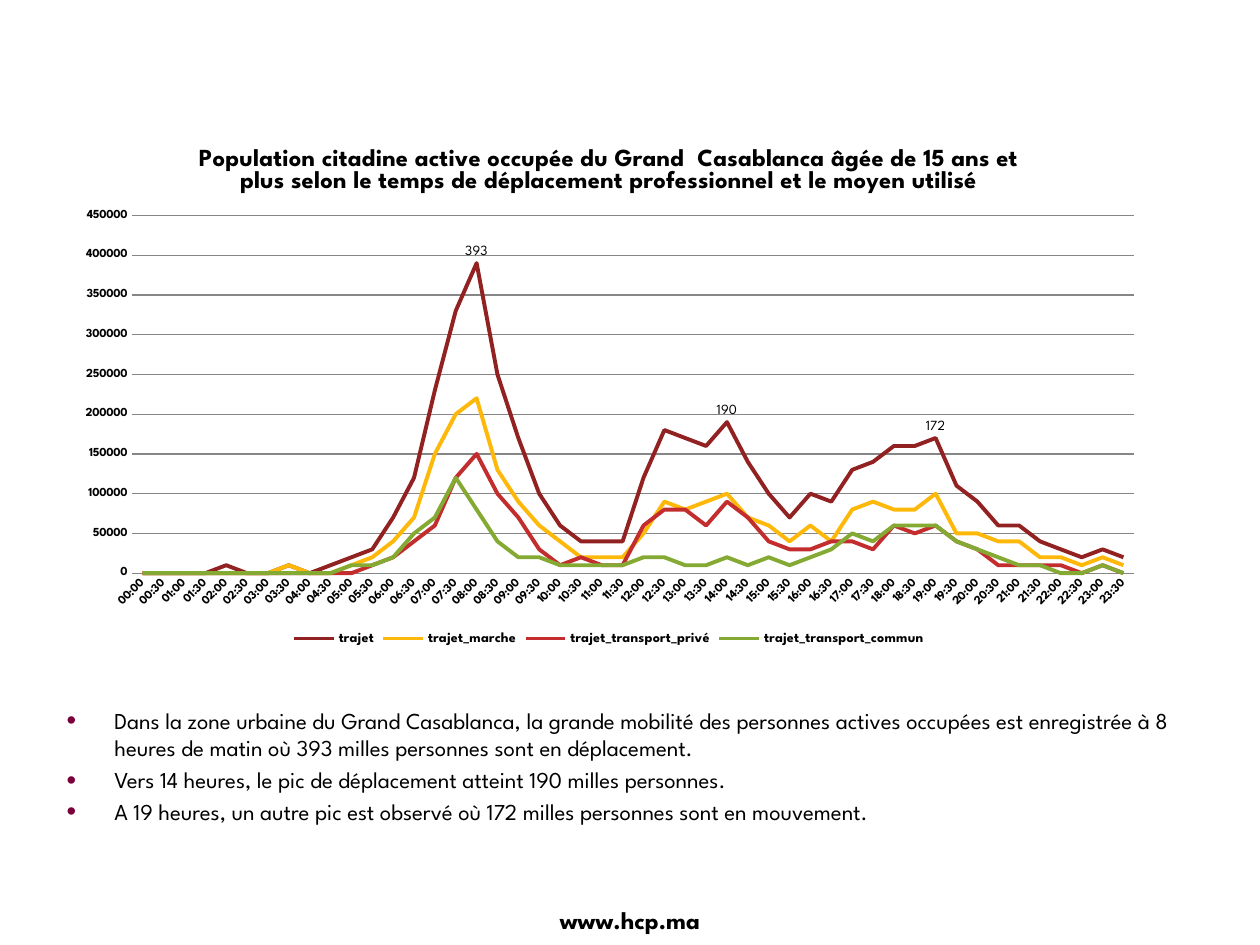
from pptx import Presentation
from pptx.chart.data import CategoryChartData
from pptx.dml.color import RGBColor
from pptx.enum.chart import XL_CHART_TYPE, XL_LABEL_POSITION, XL_LEGEND_POSITION, XL_TICK_MARK
from pptx.enum.text import PP_ALIGN
from pptx.oxml import parse_xml
from pptx.oxml.ns import nsdecls
from pptx.util import Inches, Pt

FONT = "League Spartan"


def style(font, size, color="000000", bold=False):
    font.name, font.size, font.bold = FONT, Pt(size), bold
    font.color.rgb = RGBColor.from_string(color)


def add_text(p, text, size=13, bold=False, align=None, before=0, bullet=None):
    p.alignment = align
    p.space_before = Pt(before)
    if bullet:
        pPr = p._p.get_or_add_pPr()
        pPr.set("marL", str(Inches(0.38)))
        pPr.set("indent", str(-Inches(0.38)))
        for xml in (f'<a:buClr {nsdecls("a")}><a:srgbClr val="{bullet}"/></a:buClr>',
                    f'<a:buSzPct {nsdecls("a")} val="120000"/>',
                    f'<a:buFont {nsdecls("a")} typeface="Arial"/>',
                    f'<a:buChar {nsdecls("a")} char="•"/>'):
            pPr.append(parse_xml(xml))
    r = p.add_run()
    r.text = text
    style(r.font, size, bold=bold)


title = ("Population citadine active occupée du Grand  Casablanca âgée de 15 ans et "
         "plus selon le temps de déplacement professionnel et le moyen utilisé")
bullets = [
    "Dans la zone urbaine du Grand Casablanca, la grande mobilité des personnes actives "
    "occupées est enregistrée à 8 heures de matin où 393 milles personnes sont en déplacement.",
    "Vers 14 heures, le pic de déplacement atteint 190 milles personnes.",
    "A 19 heures, un autre pic est observé où 172 milles personnes sont en mouvement.",
]
ten_thousands = {
    "trajet": ("922122", [
        0, 0, 0, 0, 1, 0, 0, 1, 0, 1, 2, 3, 7, 12, 23, 33,
        39, 25, 17, 10, 6, 4, 4, 4, 12, 18, 17, 16, 19, 14, 10, 7,
        10, 9, 13, 14, 16, 16, 17, 11, 9, 6, 6, 4, 3, 2, 3, 2]),
    "trajet_marche": ("FEB80A", [
        0, 0, 0, 0, 0, 0, 0, 1, 0, 0, 1, 2, 4, 7, 15, 20,
        22, 13, 9, 6, 4, 2, 2, 2, 5, 9, 8, 9, 10, 7, 6, 4,
        6, 4, 8, 9, 8, 8, 10, 5, 5, 4, 4, 2, 2, 1, 2, 1]),
    "trajet_transport_privé": ("C32D2E", [
        0, 0, 0, 0, 0, 0, 0, 0, 0, 0, 0, 1, 2, 4, 6, 12,
        15, 10, 7, 3, 1, 2, 1, 1, 6, 8, 8, 6, 9, 7, 4, 3,
        3, 4, 4, 3, 6, 5, 6, 4, 3, 1, 1, 1, 1, 0, 1, 0]),
    "trajet_transport_commun": ("84AA33", [
        0, 0, 0, 0, 0, 0, 0, 0, 0, 0, 1, 1, 2, 5, 7, 12,
        8, 4, 2, 2, 1, 1, 1, 1, 2, 2, 1, 1, 2, 1, 2, 1,
        2, 3, 5, 4, 6, 6, 6, 4, 3, 2, 1, 1, 0, 0, 1, 0]),
}
peaks = {16: "393", 28: "190", 38: "172"}

prs = Presentation()
prs.slide_width, prs.slide_height = Inches(10), Inches(7.5)
s = prs.slides.add_slide(prs.slide_layouts[6])

data = CategoryChartData(number_format="General")
data.categories = [f"{h:02}:{m:02}" for h in range(24) for m in (0, 30)]
for name, (color, values) in ten_thousands.items():
    data.add_series(name, [v * 10000 for v in values])
width, height = 8.67, 4.17
chart = s.shapes.add_chart(XL_CHART_TYPE.LINE, Inches(0.5), Inches(0.99),
                           Inches(width), Inches(height), data).chart
style(chart.font, 8, bold=True)
chart.has_title = True
add_text(chart.chart_title.text_frame.paragraphs[0], title, size=14, bold=True)
chart.has_legend = True
chart.legend.position = XL_LEGEND_POSITION.BOTTOM
chart.legend.include_in_layout = False

plot = chart.plots[0]
plot.vary_by_categories = False
for ser, (color, values) in zip(plot.series, ten_thousands.values()):
    ser.smooth = False
    ser.format.line.width = Pt(2.25)
    ser.format.line.color.rgb = RGBColor.from_string(color)
for i, text in peaks.items():
    label = plot.series[0].points[i].data_label
    add_text(label.text_frame.paragraphs[0], text, size=8)
    label.position = XL_LABEL_POSITION.ABOVE

for axis in (chart.category_axis, chart.value_axis):
    axis.major_tick_mark = axis.minor_tick_mark = XL_TICK_MARK.NONE
    style(axis.tick_labels.font, 7, bold=True)
    axis.format.line.color.rgb = RGBColor.from_string("868686")
chart.category_axis._element.txPr.bodyPr.set("rot", "-2700000")
chart.value_axis.format.line.fill.background()
chart.value_axis.minimum_scale, chart.value_axis.maximum_scale = 0, 450000
chart.value_axis.major_unit = 50000
grid = chart.value_axis.major_gridlines.format.line
grid.width = Pt(0.75)
grid.color.rgb = RGBColor.from_string("868686")

plot_area = chart._chartSpace.chart.plotArea
for old in plot_area.findall("{*}layout"):
    plot_area.remove(old)
plot_area.insert(0, parse_xml(
    f'<c:layout {nsdecls("c")}><c:manualLayout><c:layoutTarget val="inner"/>'
    '<c:xMode val="edge"/><c:yMode val="edge"/>'
    f'<c:x val="{0.55 / width}"/><c:y val="{0.72 / height}"/>'
    f'<c:w val="{7.95 / width}"/><c:h val="{2.84 / height}"/></c:manualLayout></c:layout>'))

tf = s.shapes.add_textbox(Inches(0.43), Inches(5.56), Inches(9.07), Inches(1.26)).text_frame
tf.word_wrap = True
for i, text in enumerate(bullets):
    p = tf.add_paragraph() if i else tf.paragraphs[0]
    add_text(p, text, before=2.6 if i else 0, bullet="7B003B")

tf = s.shapes.add_textbox(Inches(3.82), Inches(7.13), Inches(2.36), Inches(0.33)).text_frame
tf.word_wrap = True
add_text(tf.paragraphs[0], "www.hcp.ma", size=14, bold=True, align=PP_ALIGN.CENTER)

prs.save("out.pptx")
